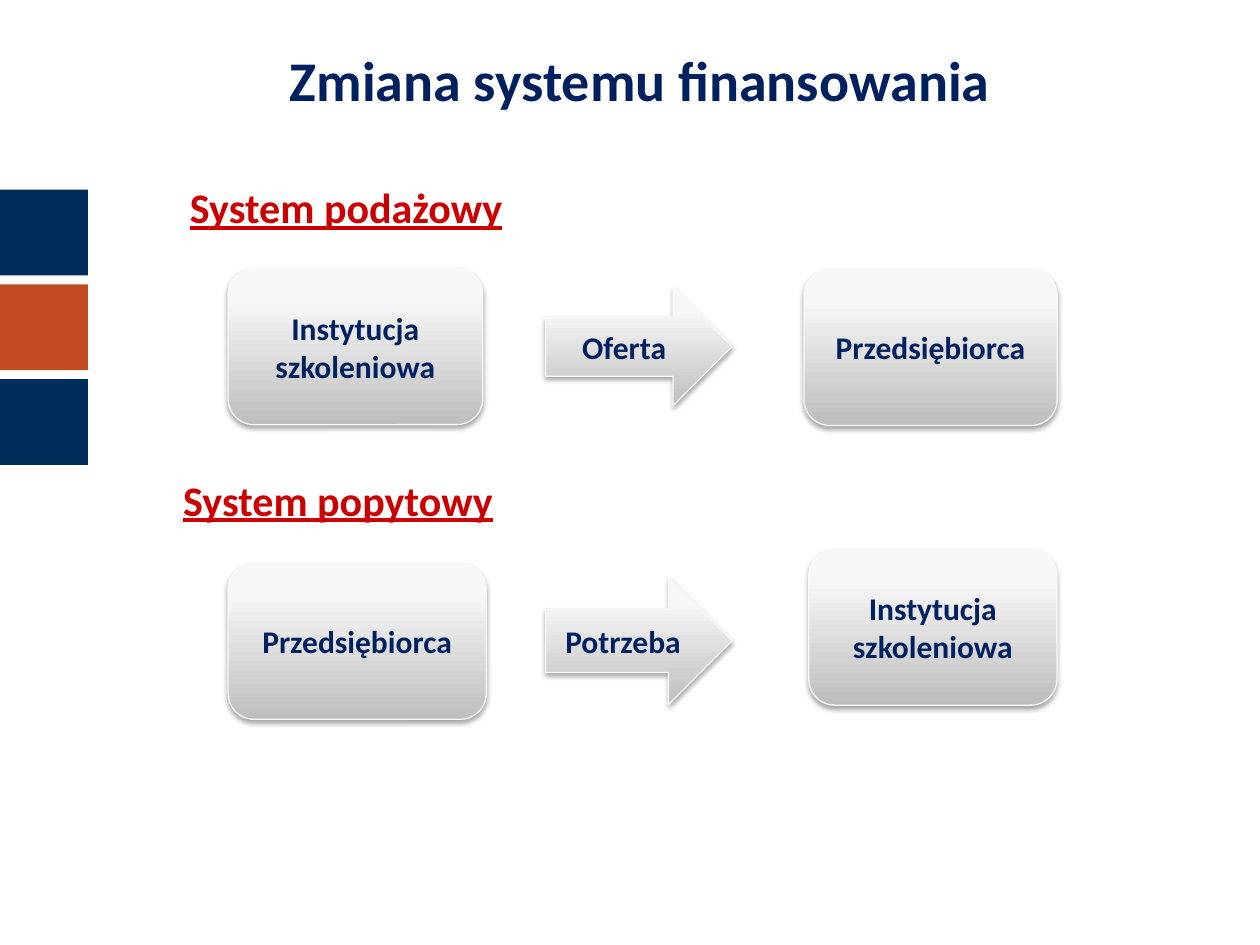
from typing import NamedTuple

from lxml.etree import SubElement
from pptx import Presentation
from pptx.dml.color import RGBColor
from pptx.enum.shapes import MSO_SHAPE as Shape
from pptx.enum.text import MSO_ANCHOR as Anchor, MSO_AUTO_SIZE as AutoSize, PP_ALIGN as Align
from pptx.oxml import parse_xml
from pptx.oxml.ns import nsdecls, qn
from pptx.util import Pt

COLORS = {
    "navy": "002C5A", "orange": "C14B20", "text": "002060", "heading": "CC0000",
    "edge": "F9F9F9", "dark": "BEBEBE", "light": "F7F7F7", "top": "F8F8F8",
    "shadow": "000000",
}
GRADIENT = [(0, "dark"), (80, "light"), (100, "top")]


class Box(NamedTuple):
    left: float
    top: float
    width: float
    height: float


class Node(NamedTuple):
    kind: Shape
    box: Box
    label: str


class Heading(NamedTuple):
    box: Box
    label: str


def color(name: str) -> RGBColor:
    return RGBColor.from_string(COLORS[name])


def place(box: Box) -> list:
    return [Pt(v) for v in box]


def write(tf, text: str, size: float, tint: str, align: Align) -> None:
    tf.word_wrap = True
    tf.text = text
    p = tf.paragraphs[0]
    p.alignment = align
    f = p.runs[0].font
    f.name, f.size, f.bold = "Calibri", Pt(size), True
    f.color.rgb = color(tint)


def add_bar(s, box: Box, tint: str) -> None:
    sp = s.shapes.add_shape(Shape.RECTANGLE, *place(box))
    sp.shadow.inherit = False
    sp.fill.solid()
    sp.fill.fore_color.rgb = color(tint)
    sp.line.fill.background()


def add_node(s, node: Node) -> None:
    sp = s.shapes.add_shape(node.kind, *place(node.box))
    sp.line.color.rgb = color("edge")
    sp.line.width = Pt(0.75)

    # Gradient running from the bottom up
    sp.fill.background()
    spPr = sp.fill._xPr
    stops = "".join(
        f'<a:gs pos="{pos * 1000}"><a:srgbClr val="{COLORS[c]}"/></a:gs>' for pos, c in GRADIENT
    )
    grad = parse_xml(
        f'<a:gradFill {nsdecls("a")} rotWithShape="1"><a:gsLst>{stops}</a:gsLst>'
        '<a:lin ang="16200000" scaled="0"/></a:gradFill>'
    )
    spPr.replace(spPr.find(qn("a:noFill")), grad)

    # Soft shadow below
    sp.shadow.inherit = False
    shadow = SubElement(
        spPr.find(qn("a:effectLst")), qn("a:outerShdw"), blurRad=str(Pt(3.1)),
        dist=str(Pt(1.8)), dir="5400000", rotWithShape="0",
    )
    tint = SubElement(shadow, qn("a:srgbClr"), val=COLORS["shadow"])
    SubElement(tint, qn("a:alpha"), val="35000")

    sp.text_frame.vertical_anchor = Anchor.MIDDLE
    write(sp.text_frame, node.label, 18, "text", Align.CENTER)


def add_title(s, box: Box, text: str) -> None:
    tf = s.shapes.add_textbox(*place(box)).text_frame
    tf.margin_top = 0
    write(tf, text, 32, "text", Align.CENTER)


def add_heading(s, heading: Heading) -> None:
    tf = s.shapes.add_textbox(*place(heading.box)).text_frame
    write(tf, heading.label, 24, "heading", Align.LEFT)
    tf.auto_size = AutoSize.SHAPE_TO_FIT_TEXT
    tf.paragraphs[0].runs[0].font.underline = True


INSTITUTION, COMPANY = "Instytucja szkoleniowa", "Przedsiębiorca"
NODES = [
    # Supply system
    Node(Shape.ROUNDED_RECTANGLE, Box(130.3, 153.4, 145.6, 89.3), INSTITUTION),
    Node(Shape.RIGHT_ARROW, Box(311.8, 164.2, 106.6, 67.7), "Oferta"),
    Node(Shape.ROUNDED_RECTANGLE, Box(459.4, 153.9, 144.7, 89.3), COMPANY),
    # Demand system
    Node(Shape.ROUNDED_RECTANGLE, Box(130.3, 321.8, 147.6, 89.3), COMPANY),
    Node(Shape.RIGHT_ARROW, Box(311.8, 329.8, 106.6, 72.7), "Potrzeba"),
    Node(Shape.ROUNDED_RECTANGLE, Box(462.2, 313.7, 141.8, 89.3), INSTITUTION),
]
HEADINGS = [
    Heading(Box(101.5, 100.1, 275.8, 36), "System podażowy"),
    Heading(Box(97.6, 267.4, 234.7, 36), "System popytowy"),
]


def main() -> None:
    prs = Presentation()
    prs.slide_width, prs.slide_height = Pt(720), Pt(540)
    s = prs.slides.add_slide(prs.slide_layouts[6])

    # Side bars
    for i, tint in enumerate(["navy", "orange", "navy"]):
        add_bar(s, Box(0, 108.3 + 54.2 * i, 50.2, 49), tint)

    # Title, headings and flow
    add_title(s, Box(59.8, 25.9, 612, 48.2), "Zmiana systemu finansowania")
    for heading in HEADINGS:
        add_heading(s, heading)
    for node in NODES:
        add_node(s, node)

    prs.save("out.pptx")


if __name__ == "__main__":
    main()
